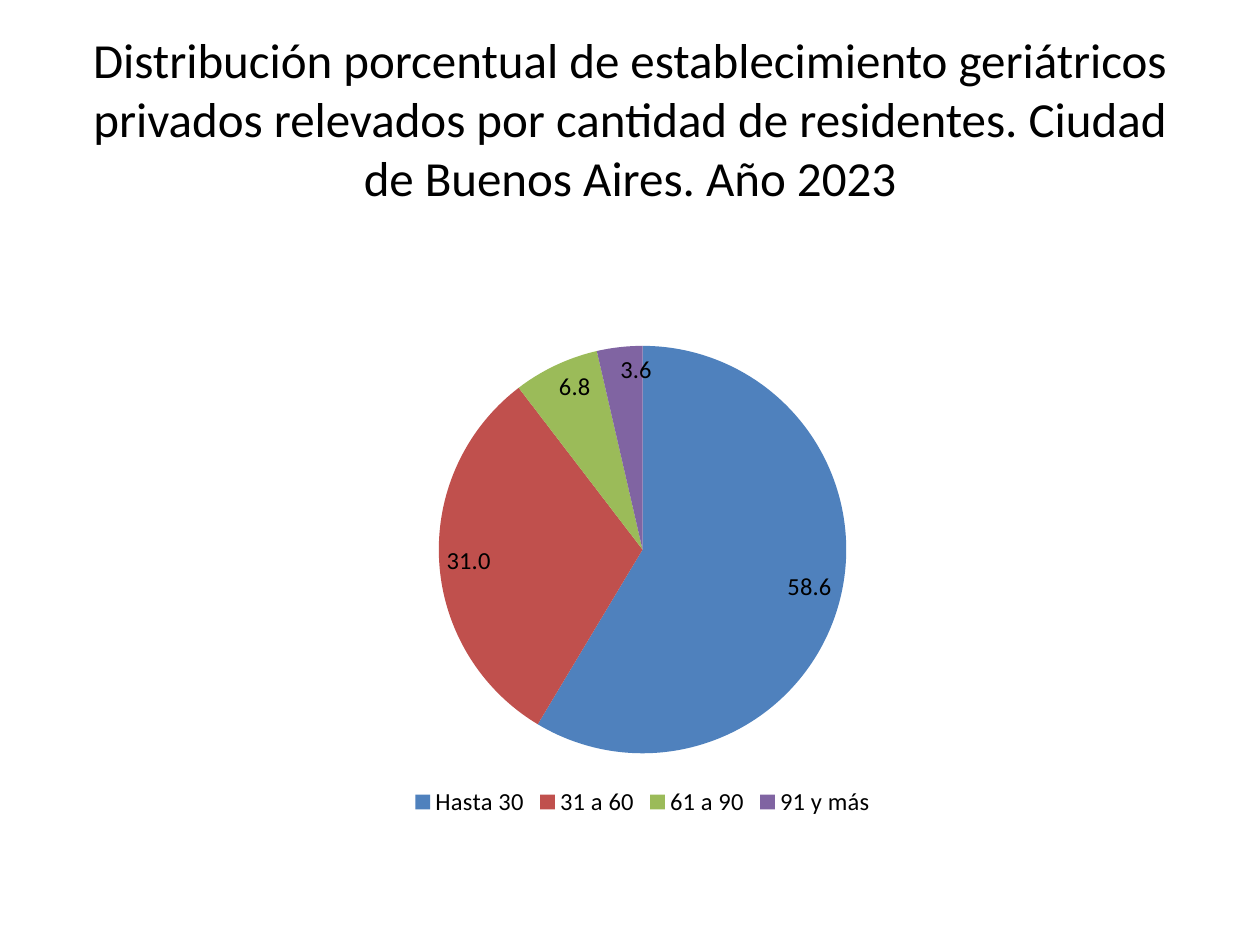
from lxml import etree
from pptx import Presentation
from pptx.chart.data import CategoryChartData
from pptx.dml.color import RGBColor
from pptx.enum.chart import XL_CHART_TYPE, XL_LABEL_POSITION, XL_LEGEND_POSITION
from pptx.enum.text import MSO_ANCHOR, PP_ALIGN
from pptx.oxml.ns import qn
from pptx.util import Inches, Pt

PIE = XL_CHART_TYPE.PIE
INSIDE_END = XL_LABEL_POSITION.INSIDE_END
BOTTOM = XL_LEGEND_POSITION.BOTTOM
MIDDLE = MSO_ANCHOR.MIDDLE
CENTER = PP_ALIGN.CENTER

BLACK = RGBColor(0x00, 0x00, 0x00)
BLUE = RGBColor(0x4F, 0x81, 0xBD)
RED = RGBColor(0xC0, 0x50, 0x4D)
GREEN = RGBColor(0x9B, 0xBB, 0x59)
PURPLE = RGBColor(0x80, 0x64, 0xA2)

WIDTH, HEIGHT = 10, 7.5
TITLE = (
    "Distribución porcentual de establecimiento geriátricos privados relevados "
    "por cantidad de residentes. Ciudad de Buenos Aires. Año 2023"
)
RESIDENTS = [
    ("Hasta 30", 58.6, BLUE),
    ("31 a 60", 31.0, RED),
    ("61 a 90", 6.8, GREEN),
    ("91 y más", 3.6, PURPLE),
]
PIE_AREA = {"x": 0.22, "y": 0.1, "w": 0.56, "h": 0.77}


class SlideBuilder:
    font_name = "Calibri"
    title_size = 28
    chart_size = 14

    def __init__(self, deck):
        self.slide = deck.slides.add_slide(deck.slide_layouts[6])

    def place(self, left, top, width, height):
        return (
            Inches(left * WIDTH),
            Inches(top * HEIGHT),
            Inches(width * WIDTH),
            Inches(height * HEIGHT),
        )

    def style_font(self, font, size):
        font.name = self.font_name
        font.size = Pt(size)
        font.color.rgb = BLACK

    def add_title(self, text, area):
        box = self.slide.shapes.add_textbox(*self.place(*area))
        frame = box.text_frame
        frame.word_wrap = True
        frame.vertical_anchor = MIDDLE
        frame.text = text
        para = frame.paragraphs[0]
        para.alignment = CENTER
        self.style_font(para.runs[0].font, self.title_size)

    def add_pie(self, slices, area):
        data = CategoryChartData(number_format="0.0")
        names, values, colors = zip(*slices)
        data.categories = names
        data.add_series("Series 1", values)
        chart = self.slide.shapes.add_chart(PIE, *self.place(*area), data).chart
        self.style_font(chart.font, self.chart_size)
        chart.has_title = False
        chart.has_legend = True
        chart.legend.position = BOTTOM
        chart.legend.include_in_layout = False
        plot = chart.plots[0]
        plot.vary_by_categories = True
        plot.has_data_labels = True
        labels = plot.data_labels
        labels.show_value = True
        labels.show_percentage = False
        labels.number_format = "0.0"
        labels.number_format_is_linked = False
        labels.position = INSIDE_END
        self.style_font(labels.font, self.chart_size)
        for index, color in enumerate(colors):
            fill = plot.series[0].points[index].format.fill
            fill.solid()
            fill.fore_color.rgb = color
        self.fix_plot_area(chart)

    def fix_plot_area(self, chart):
        plot_area = chart.element.find(".//" + qn("c:plotArea"))
        layout = plot_area.find(qn("c:layout"))
        if layout is None:
            layout = etree.Element(qn("c:layout"))
            plot_area.insert(0, layout)
        manual = etree.SubElement(layout, qn("c:manualLayout"))
        settings = {"layoutTarget": "inner", "xMode": "edge", "yMode": "edge", **PIE_AREA}
        for name, value in settings.items():
            etree.SubElement(manual, qn("c:" + name)).set("val", str(value))


def main():
    deck = Presentation()
    deck.slide_width, deck.slide_height = Inches(WIDTH), Inches(HEIGHT)
    builder = SlideBuilder(deck)
    builder.add_title(TITLE, (0.05, 0.04, 0.9, 0.17))
    builder.add_pie(RESIDENTS, (0.22, 0.31, 0.58, 0.56))
    deck.save("out.pptx")


if __name__ == "__main__":
    main()
